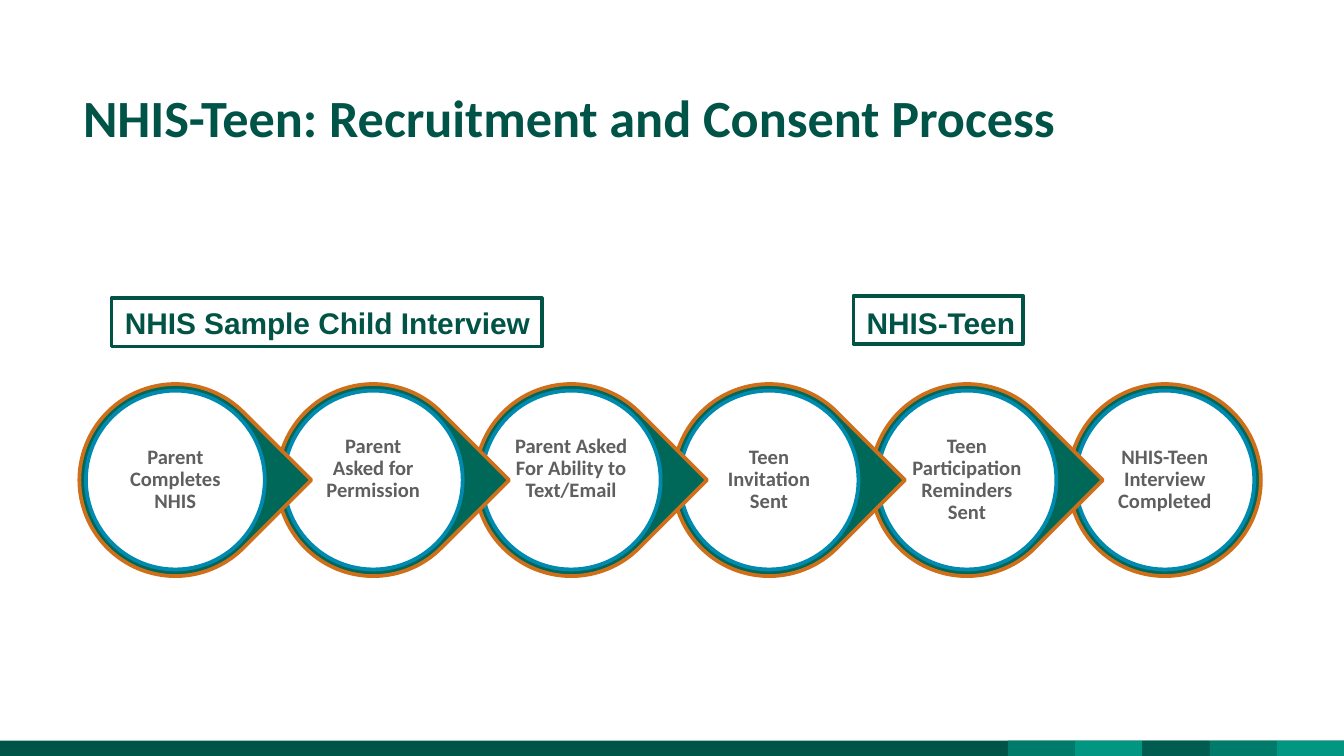
from typing import NamedTuple

from pptx import Presentation
from pptx.dml.color import RGBColor
from pptx.enum.shapes import MSO_SHAPE as Preset
from pptx.enum.text import MSO_ANCHOR as Anchor, MSO_AUTO_SIZE as AutoSize, PP_ALIGN as Align
from pptx.util import Cm, Pt

COLORS = {
    "title": "005447", "section": "015346", "step_text": "5F5F5F",
    "drop": "006858", "drop_line": "D06F1A", "disc": "FFFFFF", "disc_line": "008AB0",
    "bar": "005447", "mid": "007A69", "bright": "009681", "dark": "005C4F",
}
SLIDE_W, SLIDE_H = 25.4, 14.29
BAR_TOP, TILE_W = 14.0, 1.27
STEP_LEFT, STEP_TOP, STEP_PITCH = 1.5, 7.26, 3.74
DROP_SIZE, DISC_SIZE, LABEL_SIZE = 3.63, 3.38, 2.41
LABEL_INSET, LINE_H = 0.05, 0.43


class Box(NamedTuple):
    left: float
    top: float
    width: float
    height: float


class Section(NamedTuple):
    name: str
    text_box: Box
    frame: Box


class Step(NamedTuple):
    lines: tuple[str, ...]
    lines_below: int = 0


SECTIONS = [
    Section("NHIS Sample Child Interview", Box(2.11, 5.64, 10.67, 3.02), Box(2.11, 5.64, 8.13, 0.91)),
    Section("NHIS-Teen", Box(16.13, 5.64, 3.89, 3.02), Box(16.13, 5.59, 3.2, 0.91)),
]
STEPS = [
    Step(("Parent Completes NHIS",)),
    Step(("Parent", "Asked for Permission"), 1),
    Step(("Parent Asked For Ability to Text/Email",), 1),
    Step(("Teen Invitation Sent",)),
    Step(("Teen Participation Reminders Sent",)),
    Step(("NHIS-Teen Interview Completed",)),
]
TILES = ["mid", "bright", "dark", "mid", "bright"]


def rgb(color: str) -> RGBColor:
    return RGBColor.from_string(COLORS[color])


def lengths(box: Box) -> list[Cm]:
    return [Cm(value) for value in box]


def add_figure(slide, preset, box: Box, fill: str = "", line: str = ""):
    figure = slide.shapes.add_shape(preset, *lengths(box))
    figure.shadow.inherit = False
    if fill:
        figure.fill.solid()
        figure.fill.fore_color.rgb = rgb(fill)
    else:
        figure.fill.background()
    if line:
        figure.line.color.rgb = rgb(line)
        figure.line.width = Pt(2)
    else:
        figure.line.fill.background()
    return figure


def add_run(paragraph, text: str, font_name: str, size: int, color: str) -> None:
    run = paragraph.add_run()
    run.text = text
    run.font.name = font_name
    run.font.size = Pt(size)
    run.font.bold = True
    run.font.color.rgb = rgb(color)


def add_footer(slide) -> None:
    height = SLIDE_H - BAR_TOP
    add_figure(slide, Preset.RECTANGLE, Box(0, BAR_TOP, SLIDE_W, height), "bar")
    first_left = SLIDE_W - len(TILES) * TILE_W
    for index, color in enumerate(TILES):
        add_figure(slide, Preset.RECTANGLE, Box(first_left + index * TILE_W, BAR_TOP, TILE_W, height), color)


def fill_title(slide, text: str) -> None:
    title = slide.shapes.title
    title.left, title.top, title.width, title.height = lengths(Box(1.27, 1.47, 19.38, 1.57))
    frame = title.text_frame
    frame.auto_size = AutoSize.NONE
    frame.vertical_anchor = Anchor.BOTTOM
    frame.margin_left = Cm(0.3)
    frame.margin_top = frame.margin_right = frame.margin_bottom = Cm(0.25)
    heading = frame.paragraphs[0]
    heading.alignment = Align.LEFT
    add_run(heading, text, "Calibri", 28, "title")


def add_section(slide, section: Section) -> None:
    frame = slide.shapes.add_textbox(*lengths(section.text_box)).text_frame
    frame.word_wrap = True
    add_run(frame.paragraphs[0], section.name, "Arial", 16, "section")
    add_figure(slide, Preset.RECTANGLE, section.frame, line="section")


def centered_box(left: float, size: float) -> Box:
    offset = (DROP_SIZE - size) / 2
    return Box(left + offset, STEP_TOP + offset, size, size)


def add_step(slide, step: Step, left: float, is_last: bool) -> None:
    outline = Preset.OVAL if is_last else Preset.TEAR
    drop = add_figure(slide, outline, centered_box(left, DROP_SIZE), "drop", "drop_line")
    if not is_last:
        drop.adjustments[0] = 1
        drop.rotation = 45
    add_figure(slide, Preset.OVAL, centered_box(left, DISC_SIZE), "disc", "disc_line")

    frame = slide.shapes.add_textbox(*lengths(centered_box(left, LABEL_SIZE))).text_frame
    frame.word_wrap = True
    frame.vertical_anchor = Anchor.MIDDLE
    frame.margin_left = frame.margin_top = frame.margin_right = Cm(LABEL_INSET)
    frame.margin_bottom = Cm(LABEL_INSET + step.lines_below * LINE_H)
    for index, line in enumerate(step.lines):
        paragraph = frame.add_paragraph() if index else frame.paragraphs[0]
        paragraph.alignment = Align.CENTER
        paragraph.line_spacing = 0.9
        add_run(paragraph, line, "Calibri", 11, "step_text")


def main() -> None:
    deck = Presentation()
    deck.slide_width, deck.slide_height = Cm(SLIDE_W), Cm(SLIDE_H)
    slide = deck.slides.add_slide(deck.slide_layouts[5])
    add_footer(slide)
    fill_title(slide, "NHIS-Teen: Recruitment and Consent Process")
    last = len(STEPS) - 1
    for index in range(last, -1, -1):
        add_step(slide, STEPS[index], STEP_LEFT + index * STEP_PITCH, index == last)
    for section in SECTIONS:
        add_section(slide, section)
    deck.save("out.pptx")


if __name__ == "__main__":
    main()
